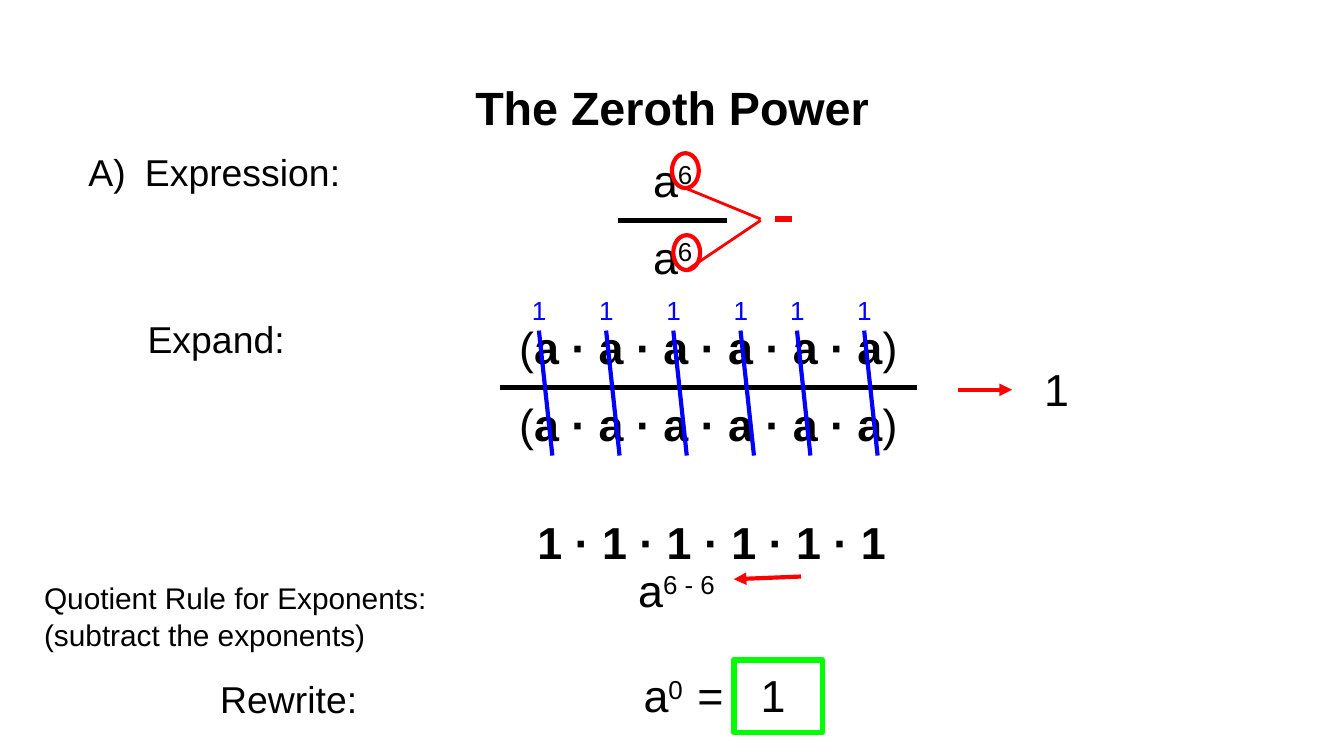
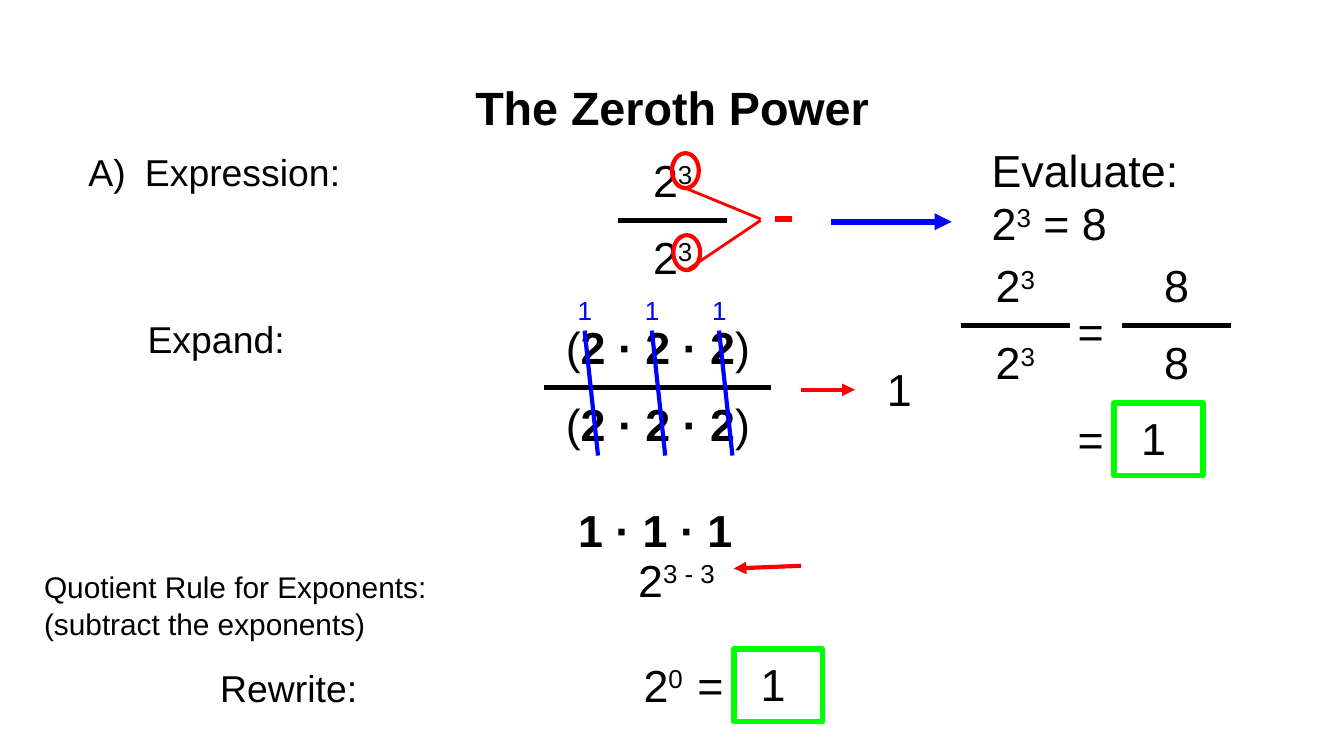
import lxml.etree
import pptx
import pptx.dml.color
import pptx.enum.shapes
import pptx.enum.text
import pptx.oxml.ns
import pptx.util

Inches = pptx.util.Inches
ALIGN = pptx.enum.text.PP_ALIGN
SHAPES = pptx.enum.shapes.MSO_SHAPE

FONT = "Arial"
COLORS = {"ink": "000000", "cancel": "0000FF", "exponent": "FF0000", "answer": "00FF00"}
PLAIN, BOLD, RAISED = "plain", "bold", "raised"
NO_TABLE_STYLE = "{2D5ABB26-0587-4C30-8999-92F81FD0307C}"


def rgb(color):
    return pptx.dml.color.RGBColor.from_string(COLORS[color])


def add_child(parent, tag, **attributes):
    child = lxml.etree.SubElement(parent, pptx.oxml.ns.qn(tag))
    for name, value in attributes.items():
        child.set(name, value)
    return child


def format_span(span, size, color, style):
    span.font.name = FONT
    span.font.size = pptx.util.Pt(size)
    span.font.color.rgb = rgb(color)
    span.font.bold = style == BOLD
    if style == RAISED:
        span.font._element.set("baseline", "30000")


def fill_para(para, parts, size, color="ink", align=ALIGN.LEFT):
    """Write a string, or a list of (text, style) parts, into a paragraph."""
    if isinstance(parts, str):
        parts = [(parts, PLAIN)]
    para.alignment = align
    for text, style in parts:
        span = para.add_run()
        span.text = text
        format_span(span, size, color, style)


def set_frame(frame):
    frame.word_wrap = True
    frame.auto_size = pptx.enum.text.MSO_AUTO_SIZE.NONE
    frame.vertical_anchor = pptx.enum.text.MSO_ANCHOR.TOP
    frame.margin_left = frame.margin_right = Inches(0.1)
    frame.margin_top = frame.margin_bottom = Inches(0.1)


def add_text(page, left, top, width, height, lines, size, color="ink",
             align=ALIGN.LEFT, spacing=1.0):
    box = page.shapes.add_textbox(Inches(left), Inches(top), Inches(width), Inches(height))
    frame = box.text_frame
    set_frame(frame)
    for index, parts in enumerate(lines):
        para = frame.add_paragraph() if index else frame.paragraphs[0]
        para.line_spacing = spacing
        fill_para(para, parts, size, color, align)
    return box


def add_outline(page, shape_type, left, top, width, height, color, weight):
    shape = page.shapes.add_shape(
        shape_type, Inches(left), Inches(top), Inches(width), Inches(height))
    shape.shadow.inherit = False
    shape.fill.background()
    shape.line.color.rgb = rgb(color)
    shape.line.width = pptx.util.Pt(weight)
    return shape


def add_line(page, start, end, color, weight, arrow=False):
    line = page.shapes.add_connector(
        pptx.enum.shapes.MSO_CONNECTOR.STRAIGHT, *map(Inches, start + end))
    line.line.color.rgb = rgb(color)
    line.line.width = pptx.util.Pt(weight)
    if arrow:
        add_child(line.line._get_or_add_ln(), "a:tailEnd", type="triangle")
    add_child(line._element.spPr, "a:effectLst")


def set_border(cell, side):
    properties = cell._tc.get_or_add_tcPr()
    border = add_child(properties, side, w=str(pptx.util.Pt(3)))
    add_child(add_child(border, "a:solidFill"), "a:srgbClr", val=COLORS["ink"])
    properties.insert(0, border)


def add_fraction(page, left, top, width, parts):
    """Stack the same term over itself, split by a fraction bar."""
    table = page.shapes.add_table(
        2, 1, Inches(left), Inches(top), Inches(width), Inches(0.82)).table
    table.first_row = table.horz_banding = False
    table._tbl.tblPr.find(pptx.oxml.ns.qn("a:tableStyleId")).text = NO_TABLE_STYLE
    for row, side in enumerate(("a:lnB", "a:lnT")):
        cell = table.cell(row, 0)
        cell.margin_left = cell.margin_right = Inches(0.1)
        cell.margin_top = cell.margin_bottom = Inches(0.1)
        cell.fill.background()
        fill_para(cell.text_frame.paragraphs[0], parts, 24, align=ALIGN.CENTER)
        set_border(cell, side)


def add_equals(page, left, top):
    add_text(page, left, top, 0.4, 0.62, ["="], 24)


def add_answer(page, left, top):
    """Draw the boxed answer with an equals sign before it."""
    add_equals(page, left - 0.37, top - 0.04)
    box = add_outline(page, SHAPES.RECTANGLE, left, top, 0.66, 0.54, "answer", 3)
    set_frame(box.text_frame)
    box.text_frame.margin_left = Inches(0.2)
    box.text_frame.margin_top = Inches(0.06)
    fill_para(box.text_frame.paragraphs[0], "1", 24)


def add_title(page):
    title = page.shapes.title
    title.left, title.top = Inches(0.34), Inches(0.49)
    title.width, title.height = Inches(9.32), Inches(0.62)
    set_frame(title.text_frame)
    title.text_frame.text = "The Zeroth Power"
    para = title.text_frame.paragraphs[0]
    para.alignment = ALIGN.CENTER
    format_span(para.runs[0], 25, "ink", BOLD)


def add_expression(page, left, top, power):
    label = add_text(page, left, top, 2.16, 0.62, ["Expression:"], 20)
    properties = label.text_frame.paragraphs[0]._p.get_or_add_pPr()
    properties.set("marL", str(Inches(0.5)))
    properties.set("indent", str(Inches(-0.42)))
    add_child(add_child(properties, "a:buClr"), "a:srgbClr", val=COLORS["ink"])
    add_child(properties, "a:buFont", typeface=FONT)
    add_child(properties, "a:buAutoNum", type="alphaUcParenR")

    add_fraction(page, left + 4.12, top + 0.06, 0.81, power)
    minus_y = top + 0.62
    for ring_left, ring_top, tip_y in ((4.53, 0.74, 0.01), (4.52, 0.13, 0)):
        x, y = left + ring_left, top + ring_top
        add_outline(page, SHAPES.OVAL, x, y, 0.2, 0.26, "exponent", 2.25)
        add_line(page, (x + 0.1, y + 0.26), (left + 5.18, minus_y + tip_y), "exponent", 1.5)
    add_line(page, (left + 5.29, minus_y), (left + 5.41, minus_y), "exponent", 3)


def add_expansion(page, top, base, left, width, cancel_xs, arrow_x):
    """Write the factors as a fraction and strike out each pair."""
    add_text(page, 1, top, 1.26, 0.62, ["Expand:"], 20)
    product = " · ".join([base] * len(cancel_xs))
    add_fraction(page, left, top + 0.06, width,
                 [("(", PLAIN), (product, BOLD), (")", PLAIN)])
    for x in cancel_xs:
        add_line(page, (x, top + 0.21), (x + 0.1, top + 1.14), "cancel", 2.25)
        add_text(page, x - 0.15, top - 0.16, 0.39, 0.6, ["1"], 14, "cancel")
    arrow_y = top + 0.65
    add_line(page, (arrow_x, arrow_y), (arrow_x + 0.4, arrow_y), "exponent", 2.25, arrow=True)
    add_text(page, arrow_x + 0.54, top + 0.34, 0.5, 0.62, ["1"], 24)


def add_ones(page, left, top, count):
    add_text(page, left, top, 4.51, 0.54, [[(" · ".join("1" * count), BOLD)]], 24,
             align=ALIGN.CENTER, spacing=1.5)


def add_quotient_rule(page, top, base, exponent):
    label = add_text(page, 0.23, top + 0.12, 3.6, 0.75,
                     ["Quotient Rule for Exponents:", "(subtract the exponents)"], 16)
    label.text_frame.paragraphs[1].space_before = pptx.util.Pt(1)
    add_text(page, 4.65, top, 1.1, 0.62,
             [[(base, PLAIN), (f"{exponent} - {exponent}", RAISED)]], 24)
    add_line(page, (5.96, top + 0.2), (5.46, top + 0.22), "exponent", 2.25, arrow=True)


def add_rewrite(page, top, base):
    add_text(page, 1.54, top + 0.06, 1.5, 0.62, ["Rewrite:"], 20)
    add_text(page, 4.69, top, 0.6, 0.62, [[(base, PLAIN), ("0", RAISED)]], 24)
    add_answer(page, 5.46, top + 0.04)


def add_evaluation(page, left, top, power, value):
    add_line(page, (left - 1.1, top + 0.69), (left - 0.2, top + 0.69), "cancel", 3, arrow=True)
    add_text(page, left, top, 2.16, 1,
             ["Evaluate:", power + [(f" = {value}", PLAIN)]], 24)
    add_fraction(page, left - 0.13, top + 0.89, 0.81, power)
    add_fraction(page, left + 1.07, top + 0.89, 0.81, value)
    add_equals(page, left + 0.64, top + 1.2)
    add_answer(page, left + 1.01, top + 2.04)


def add_zeroth_power_page(deck, base, exponent, expansion, ones, rule_top):
    page = deck.slides.add_slide(deck.slide_layouts[5])
    power = [(base, PLAIN), (str(exponent), RAISED)]
    add_title(page)
    add_expression(page, 0.48, 1.01, power)
    add_expansion(page, 2.25, base, **expansion)
    add_ones(page, *ones, exponent)
    add_quotient_rule(page, rule_top, base, exponent)
    add_rewrite(page, rule_top + 0.78, base)
    return page, power


def main():
    deck = pptx.Presentation()
    deck.slide_width = Inches(10)
    deck.slide_height = deck.slide_width * 9 // 16
    add_zeroth_power_page(
        deck, "a", 6,
        {"left": 3.72, "width": 3.1, "arrow_x": 7.13,
         "cancel_xs": (4.01, 4.51, 5.01, 5.51, 5.93, 6.43)},
        ones=(3.04, 3.53), rule_top=4.09)
    page, power = add_zeroth_power_page(
        deck, "2", 3,
        {"left": 4.05, "width": 1.69, "arrow_x": 5.96, "cancel_xs": (4.35, 4.85, 5.35)},
        ones=(2.62, 3.44), rule_top=4.01)
    add_evaluation(page, 7.28, 0.96, power, "8")
    deck.save("out.pptx")


if __name__ == "__main__":
    main()
